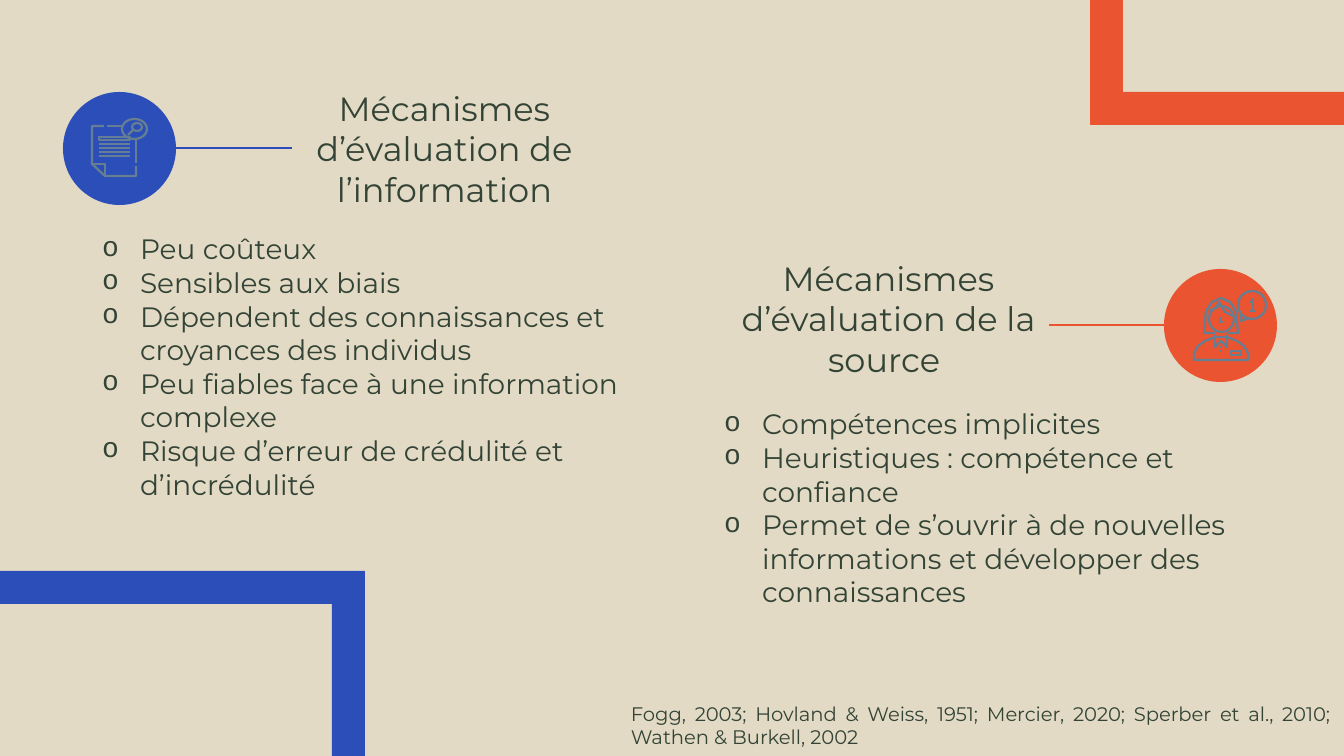
from lxml.etree import SubElement
from pptx import Presentation
from pptx.dml.color import RGBColor
from pptx.enum.shapes import MSO_CONNECTOR, MSO_SHAPE
from pptx.enum.text import MSO_ANCHOR, PP_ALIGN
from pptx.oxml.ns import qn
from pptx.util import Pt

SAND = RGBColor(0xE3, 0xDA, 0xC5)
ORANGE = RGBColor(0xEA, 0x54, 0x30)
BLUE = RGBColor(0x2C, 0x4E, 0xB8)
GREEN = RGBColor(0x33, 0x44, 0x36)
SLATE = RGBColor(0x65, 0x7E, 0x93)

EMU_PER_PX = 914400 / 134.4
INSET = 13
BULLET_INDENT = 38
DISC = 113
FRAME_WIDTH = 549
FRAME_HEIGHT = 589
FRAME_BAND = 33


def px(length):
    return round(length * EMU_PER_PX)


class SlideBuilder:
    font = "Montserrat"
    bullet_font = "Courier New"
    ink = GREEN
    icon_color = SLATE
    icon_width = Pt(1.2)
    link_width = Pt(1.5)

    def __init__(self, page):
        self.page = page
        self.page.background.fill.solid()
        self.page.background.fill.fore_color.rgb = SAND

    def paint(self, shape, fill=None):
        shape.shadow.inherit = False
        if fill is None:
            shape.fill.background()
            shape.line.color.rgb = self.icon_color
            shape.line.width = self.icon_width
        else:
            shape.fill.solid()
            shape.fill.fore_color.rgb = fill
            shape.line.fill.background()

    def preset(self, kind, area, fill=None):
        shape = self.page.shapes.add_shape(kind, *map(px, area))
        self.paint(shape, fill)
        return shape

    def ellipse(self, left, top, width, height, fill=None):
        self.preset(MSO_SHAPE.OVAL, (left, top, width, height), fill)

    def corner_frame(self, left, top, fill):
        frame = self.preset(MSO_SHAPE.FRAME, (left, top, FRAME_WIDTH, FRAME_HEIGHT), fill)
        frame.adjustments[0] = FRAME_BAND / FRAME_WIDTH

    def outline(self, points, closed=False):
        builder = self.page.shapes.build_freeform(*points[0], scale=EMU_PER_PX)
        builder.add_line_segments(points[1:], close=closed)
        self.paint(builder.convert_to_shape())

    def line(self, start, end, color, width):
        connector = self.page.shapes.add_connector(
            MSO_CONNECTOR.STRAIGHT, *map(px, start + end))
        connector.line.color.rgb = color
        connector.line.width = width
        SubElement(connector._element.spPr, qn("a:effectLst"))

    def icon_line(self, start, end):
        self.line(start, end, self.icon_color, self.icon_width)

    def link(self, start, end, color):
        self.line(start, end, color, self.link_width)

    def text(self, area, paragraphs, size, align=PP_ALIGN.LEFT, bullets=False, inset_top=INSET):
        box = self.page.shapes.add_textbox(*map(px, area))
        frame = box.text_frame
        frame.word_wrap = True
        frame.vertical_anchor = MSO_ANCHOR.TOP
        frame.margin_left = frame.margin_right = px(INSET)
        frame.margin_top = frame.margin_bottom = px(inset_top)
        for index, words in enumerate(paragraphs):
            para = frame.paragraphs[0] if index == 0 else frame.add_paragraph()
            para.alignment = align
            if bullets:
                self.bullet(para)
            span = para.add_run()
            span.text = words
            span.font.name = self.font
            span.font.size = Pt(size)
            span.font.color.rgb = self.ink

    def bullet(self, para):
        properties = para._p.get_or_add_pPr()
        properties.set("marL", str(px(BULLET_INDENT)))
        properties.set("indent", str(-px(BULLET_INDENT)))
        color = SubElement(properties, qn("a:buClr"))
        SubElement(color, qn("a:srgbClr"), val=str(self.ink))
        SubElement(properties, qn("a:buFont"), typeface=self.bullet_font)
        SubElement(properties, qn("a:buChar"), char="o")

    def title(self, area, words):
        self.text(area, [words], 18, PP_ALIGN.CENTER)

    def bullet_list(self, area, items):
        self.text(area, items, 15, bullets=True)

    def document_icon(self):
        self.outline([(104, 126), (92, 126), (92, 164), (105, 176), (136, 176), (136, 166)])
        self.outline([(92, 164), (105, 164), (105, 176)])
        self.icon_line((107, 126), (122, 126))
        self.icon_line((136, 140), (136, 163))
        self.ellipse(122, 119, 25, 20)
        self.ellipse(132, 123, 10, 8)
        self.icon_line((133, 130), (128, 135))
        self.outline([(99, 137), (130, 137), (130, 140), (99, 140)], closed=True)
        for row in range(4):
            y = 144 + 4 * row
            self.icon_line((99, y), (130, y))

    def person_icon(self):
        self.outline([(1194, 360), (1194, 353), (1198, 346), (1205, 341), (1215, 337),
                      (1227, 337), (1237, 341), (1244, 346), (1248, 353), (1248, 360)], closed=True)
        self.outline([(1215, 333), (1204, 333), (1206, 311), (1212, 302), (1221, 298),
                      (1230, 302), (1236, 311), (1238, 333), (1227, 333)])
        self.ellipse(1209, 306, 25, 26)
        self.outline([(1209, 311), (1216, 308), (1219, 302), (1225, 312), (1233, 316)])
        self.outline([(1220, 317), (1220, 322), (1223, 322)])
        self.outline([(1215, 335), (1215, 347), (1221, 341), (1227, 347), (1227, 335)])
        self.outline([(1231, 351), (1241, 351), (1241, 355), (1231, 355)], closed=True)
        for y in (346, 350):
            self.ellipse(1220, y, 2, 2, self.icon_color)
        self.ellipse(1238, 291, 28, 28)
        self.outline([(1241, 314), (1241, 321), (1249, 318)])
        self.outline([(1250, 302), (1253, 302), (1253, 311)])
        self.icon_line((1250, 311), (1256, 311))
        self.ellipse(1251, 298, 3, 3, self.icon_color)


def main():
    deck = Presentation()
    deck.slide_width, deck.slide_height = px(1344), px(756)
    slide = SlideBuilder(deck.slides.add_slide(deck.slide_layouts[6]))

    slide.corner_frame(1090, -464, ORANGE)
    slide.corner_frame(-184, 571, BLUE)

    slide.title((234, 75, 421, 129), "Mécanismes d’évaluation de l’information")
    slide.title((711, 245, 355, 137), "Mécanismes d’évaluation de la source ")
    slide.bullet_list((89, 219, 593, 300), [
        "Peu coûteux",
        "Sensibles aux biais",
        "Dépendent des connaissances et croyances des individus",
        "Peu fiables face à une information complexe",
        "Risque d’erreur de crédulité et d’incrédulité",
    ])
    slide.bullet_list((711, 394, 566, 235), [
        "Compétences implicites",
        "Heuristiques : compétence et confiance",
        "Permet de s’ouvrir à de nouvelles informations et développer des connaissances",
    ])

    slide.link((176, 148), (292, 148), BLUE)
    slide.ellipse(63, 92, DISC, DISC, BLUE)
    slide.document_icon()
    slide.link((1164, 325), (1049, 325), ORANGE)
    slide.ellipse(1164, 269, DISC, DISC, ORANGE)
    slide.person_icon()

    slide.text((618, 695, 726, 60), [
        "Fogg, 2003; Hovland & Weiss, 1951; Mercier, 2020; Sperber et al., 2010; "
        "Wathen & Burkell, 2002"
    ], 10.5, PP_ALIGN.JUSTIFY, inset_top=7)

    deck.save("out.pptx")


if __name__ == "__main__":
    main()
